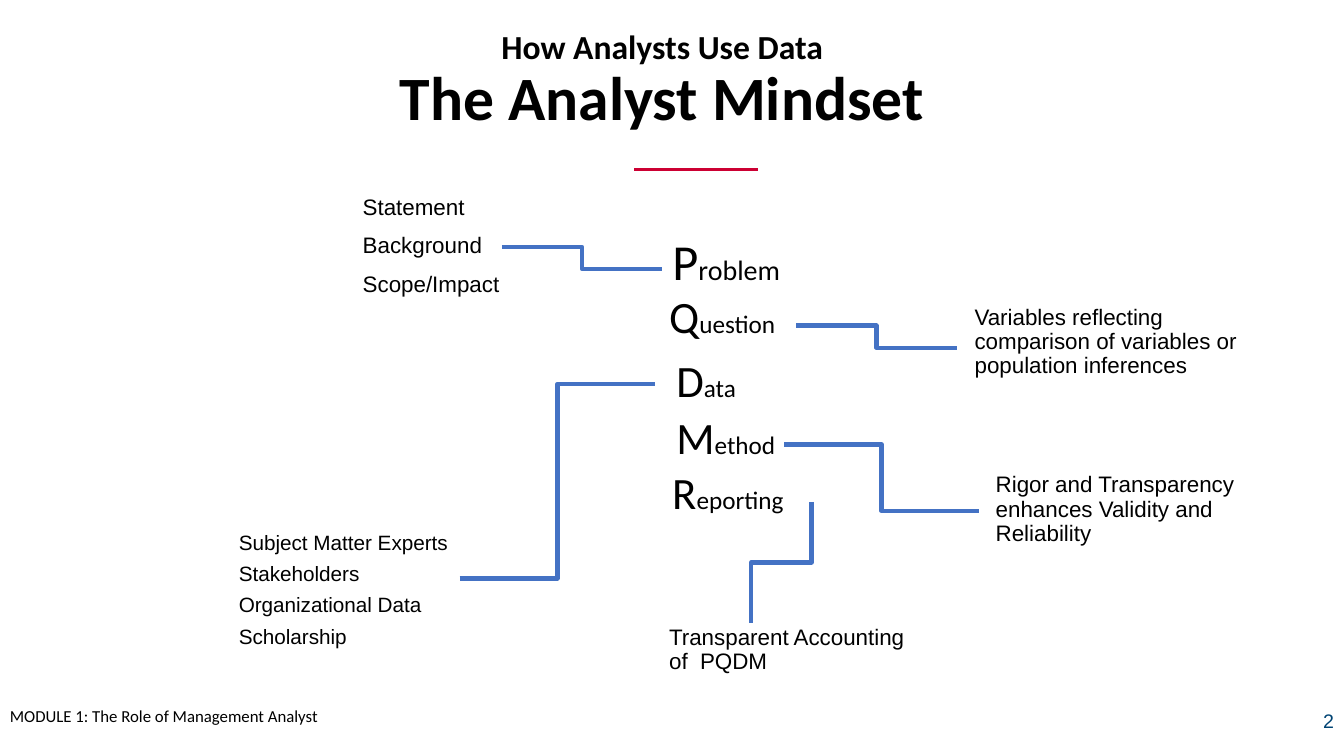
import pptx
import pptx.dml.color
import pptx.enum.shapes
import pptx.enum.text
import pptx.oxml.xmlchemy
import pptx.util

ALIGN = pptx.enum.text.PP_ALIGN
ANCHOR = pptx.enum.text.MSO_ANCHOR
CONNECTOR = pptx.enum.shapes.MSO_CONNECTOR

SLIDE_WIDTH = pptx.util.Inches(13.33)
SLIDE_HEIGHT = pptx.util.Inches(7.5)
BLACK, RED, BLUE, NAVY = "000000", "CC0033", "4472C4", "004474"
LETTER_HEIGHT = 8.53

# Places are percentages of the slide's width and height.
LETTERS = [
    ("Q", "uestion", 49.05, 37.47, 12.15),
    ("D", "ata", 49.58, 46, 7.5),
    ("M", "ethod", 49.58, 53.6, 9.68),
    ("R", "eporting", 49.28, 60.8, 11.1),
]
NOTES = [
    (["Statement", "Background", "Scope/Impact"],
     (26.25, 25.33, 16.5, 17.33), 16, 0.9),
    (["Subject Matter Experts", "Stakeholders", "Organizational Data", "Scholarship"],
     (17.03, 70.27, 19.28, 17.33), 14.8, 0.7),
    (["Variables reflecting comparison of variables or population inferences"],
     (71.78, 39.87, 21.53, 11.33), 16, 0.9),
    (["Rigor and Transparency enhances Validity and Reliability"],
     (73.35, 62, 19.28, 14.53), 16, 0.9),
    (["Transparent Accounting of  PQDM"],
     (49.05, 82.13, 19.28, 8.13), 16, 0.9),
]
SIDE_LINKS = [
    ((37.35, 32.67), (49.28, 35.6)),
    ((59.25, 43.07), (71.18, 46)),
    ((58.35, 58.8), (72.83, 67.6)),
    ((34.2, 76.53), (48.75, 50.8)),
]
REPORTING_LINK = ((60.38, 66.4), (55.88, 82.4))


def across(percent):
    return round(SLIDE_WIDTH * percent / 100)


def down(percent):
    return round(SLIDE_HEIGHT * percent / 100)


def rgb(color):
    return pptx.dml.color.RGBColor.from_string(color)


def apply_format(target, values):
    for name, value in values.items():
        setattr(target, name, value)


def append_element(parent, tag):
    parent.append(pptx.oxml.xmlchemy.OxmlElement(tag))


def place(shape, box):
    left, top, width, height = box
    apply_format(shape, {"left": across(left), "top": down(top),
                         "width": across(width), "height": down(height)})


def add_run(paragraph, text, size, font="Calibri", color=BLACK, bold=False):
    run = paragraph.add_run()
    run.text = text
    apply_format(run.font, {"name": font, "size": pptx.util.Pt(size), "bold": bold})
    run.font.color.rgb = rgb(color)


def add_text_box(slide, box, wrap=True, anchor=ANCHOR.TOP):
    shape = slide.shapes.add_textbox(0, 0, 0, 0)
    place(shape, box)
    apply_format(shape.text_frame, {"word_wrap": wrap, "vertical_anchor": anchor})
    return shape.text_frame


def fill_title(title):
    place(title, (6.15, 2, 86.25, 17.73))
    apply_format(title.text_frame, {"auto_size": pptx.enum.text.MSO_AUTO_SIZE.NONE,
                                    "vertical_anchor": ANCHOR.MIDDLE})
    paragraph = title.text_frame.paragraphs[0]
    apply_format(paragraph, {"alignment": ALIGN.CENTER, "line_spacing": 0.9})
    add_run(paragraph, "How Analysts Use Data", 24, bold=True)
    paragraph.add_line_break()
    add_run(paragraph, "The Analyst Mindset", 44, bold=True)


def fill_problem(body):
    place(body, (49.28, 31.33, 11.1, LETTER_HEIGHT))
    body.text_frame.auto_size = pptx.enum.text.MSO_AUTO_SIZE.NONE
    paragraph = body.text_frame.paragraphs[0]
    apply_format(paragraph, {"line_spacing": 0.8, "space_before": pptx.util.Pt(10)})
    properties = paragraph._p.get_or_add_pPr()
    properties.set("marL", "0")
    properties.set("indent", "0")
    append_element(properties, "a:buNone")
    add_run(paragraph, "P", 36)
    add_run(paragraph, "roblem", 20)


def add_letter(slide, initial, rest, left, top, width):
    frame = add_text_box(slide, (left, top, width, LETTER_HEIGHT))
    add_run(frame.paragraphs[0], initial, 32)
    add_run(frame.paragraphs[0], rest, 18)


def add_note(slide, lines, box, size, line_spacing):
    frame = add_text_box(slide, box)
    for index, line in enumerate(lines):
        paragraph = frame.add_paragraph() if index else frame.paragraphs[0]
        apply_format(paragraph, {"line_spacing": line_spacing,
                                 "space_before": pptx.util.Pt(10)})
        add_run(paragraph, line, size, "Arial")


def add_line(slide, kind, start, end, color, width):
    connector = slide.shapes.add_connector(
        kind, across(start[0]), down(start[1]), across(end[0]), down(end[1]))
    connector.line.color.rgb = rgb(color)
    connector.line.width = pptx.util.Pt(width)
    append_element(connector._element.spPr, "a:effectLst")
    return connector


def add_downward_link(slide, start, end):
    """Draw an elbow that leaves downwards: a sideways elbow turned by 90 degrees."""
    connector = add_line(slide, CONNECTOR.ELBOW, start, end, BLUE, 3)
    middle_x = connector.left + connector.width // 2
    middle_y = connector.top + connector.height // 2
    length, breadth = connector.height, connector.width
    apply_format(connector, {"left": middle_x - length // 2, "width": length,
                             "top": middle_y - breadth // 2, "height": breadth})
    transform = connector._element.spPr.xfrm
    transform.set("rot", "5400000")
    transform.set("flipH", "0")


def add_footer(slide):
    module = add_text_box(slide, (0, 92.67, 27.23, 4), wrap=False)
    add_run(module.paragraphs[0], "MODULE 1: The Role of Management Analyst", 12)
    number = add_text_box(slide, (82.5, 92.67, 17.5, 5.33), anchor=ANCHOR.MIDDLE)
    number.paragraphs[0].alignment = ALIGN.RIGHT
    add_run(number.paragraphs[0], "2", 14, "Arial", NAVY)


def main():
    presentation = pptx.Presentation()
    apply_format(presentation, {"slide_width": SLIDE_WIDTH, "slide_height": SLIDE_HEIGHT})
    slide = presentation.slides.add_slide(presentation.slide_layouts[1])
    add_line(slide, CONNECTOR.STRAIGHT, (47.18, 22.4), (56.4, 22.4), RED, 2.25)
    fill_title(slide.shapes.title)
    fill_problem(slide.placeholders[1])
    add_footer(slide)
    for letter in LETTERS:
        add_letter(slide, *letter)
    for note in NOTES:
        add_note(slide, *note)
    for start, end in SIDE_LINKS:
        add_line(slide, CONNECTOR.ELBOW, start, end, BLUE, 3)
    add_downward_link(slide, *REPORTING_LINK)
    presentation.save("out.pptx")


if __name__ == "__main__":
    main()
